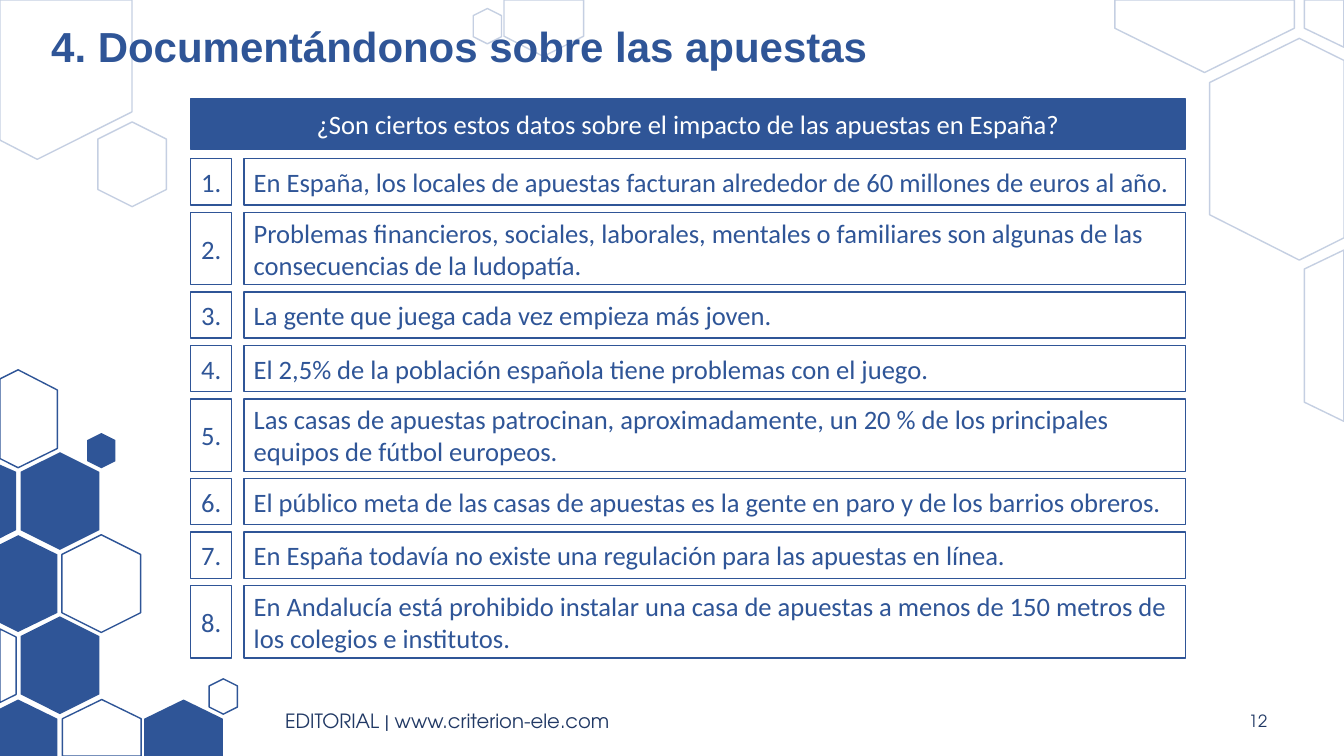
import pptx
import pptx.dml.color
import pptx.enum.shapes
import pptx.enum.text
import pptx.oxml
import pptx.oxml.ns
import pptx.util

Pt = pptx.util.Pt
RGBColor = pptx.dml.color.RGBColor
Align = pptx.enum.text.PP_ALIGN
Shape = pptx.enum.shapes.MSO_SHAPE

BLUE = RGBColor(0x2F, 0x55, 0x97)
NAVY = RGBColor(0x20, 0x38, 0x64)
WHITE = RGBColor(0xFF, 0xFF, 0xFF)

# Ornament styles: fill, line colour, line opacity in percent
PALE = (WHITE, BLUE, 28)
OUTLINE = (WHITE, BLUE, 100)
SOLID = (BLUE, None, 100)
BLANK = (WHITE, None, 100)

LARGE = (69.8, 56.2)
MEDIUM = (60.5, 49)
SMALL = (25.2, 20.2)


class SlideBuilder:
    """Holds the text style and the slide being built."""

    font = "Calibri"
    size = 19
    colour = BLUE

    def __init__(self, slide):
        self.slide = slide

    def paint(self, shape, fill, line, opacity=100):
        shape.shadow.inherit = False
        if fill is None:
            shape.fill.background()
        else:
            shape.fill.solid()
            shape.fill.fore_color.rgb = fill
        if line is None:
            shape.line.fill.background()
            return
        shape.line.color.rgb = line
        shape.line.width = Pt(1)
        if opacity < 100:
            colour = shape.element.xpath(".//a:ln//a:srgbClr")[0]
            namespace = pptx.oxml.ns.nsdecls("a")
            colour.append(pptx.oxml.parse_xml(f'<a:alpha {namespace} val="{opacity * 1000}"/>'))

    def hexagon(self, style, left, top, size):
        shape = self.slide.shapes.add_shape(Shape.HEXAGON, Pt(left), Pt(top), *map(Pt, size))
        shape.rotation = 90
        self.paint(shape, *style)

    def cut_hexagon(self, style, *corners):
        first, *others = [(Pt(x), Pt(y)) for x, y in corners]
        builder = self.slide.shapes.build_freeform(*first, scale=1.0)
        builder.add_line_segments(others, close=True)
        self.paint(builder.convert_to_shape(), *style)

    def set_text(self, shape, text, align=Align.LEFT, font=None, size=None, colour=None,
                 bold=False, spacing=None):
        frame = shape.text_frame
        frame.word_wrap = True
        frame.vertical_anchor = pptx.enum.text.MSO_ANCHOR.MIDDLE
        paragraph = frame.paragraphs[0]
        paragraph.alignment = align
        if spacing:
            paragraph.line_spacing = spacing
        run = paragraph.add_run()
        run.text = text
        run.font.name = font or self.font
        run.font.size = Pt(size or self.size)
        run.font.bold = bold
        run.font.color.rgb = colour or self.colour

    def label(self, box, text, **style):
        self.set_text(self.slide.shapes.add_textbox(*map(Pt, box)), text, **style)

    def panel(self, box, text, fill=None, **style):
        shape = self.slide.shapes.add_shape(Shape.RECTANGLE, *map(Pt, box))
        self.paint(shape, fill, BLUE)
        self.set_text(shape, text, **style)


def add_ornaments(page):
    whole, cut = page.hexagon, page.cut_hexagon

    # Pale hexagons along the top and right
    whole(PALE, 335.5, 8.6, SMALL)
    cut(PALE, (360, 0), (416.9, 0), (416.9, 25.9), (388.1, 40.3), (360, 25.9))
    cut(PALE, (796.3, 0), (924.5, 0), (924.5, 20.2), (860.4, 51.8), (796.3, 20.2))
    cut(PALE, (931.7, 0), (960, 0), (960, 33.8), (931.7, 20.2))
    cut(PALE, (928.1, 27.4), (960, 43.2), (960, 169.9), (928.1, 185.8), (864, 153.4), (864, 59))
    cut(PALE, (960, 178.6), (960, 301), (931.7, 287.3), (931.7, 192.2))
    cut(PALE, (0, 0), (94.3, 0), (94.3, 79.9), (26.6, 113.8), (0, 100.1))
    whole(PALE, 64.1, 92.9, MEDIUM)

    # Honeycomb in the lower left corner
    cut(OUTLINE, (13, 264.2), (41, 278.6), (41, 320.4), (13, 334.1), (0, 327.6), (0, 270.7))
    whole(BLANK, 37.4, 271.4, LARGE)
    cut(SOLID, (0, 331.9), (11.5, 337), (11.5, 378.7), (0, 384.5))
    whole(SOLID, 7.9, 329.8, LARGE)
    cut(SOLID, (13, 382.3), (41, 396), (41, 437.8), (13, 451.4), (0, 445), (0, 388.8))
    whole(OUTLINE, 37.4, 388.8, LARGE)
    cut(OUTLINE, (0, 449.3), (11.5, 455), (11.5, 496.1), (0, 501.8))
    whole(SOLID, 7.9, 447.1, LARGE)
    cut(SOLID, (13, 499.7), (41, 513.4), (41, 540), (0, 540), (0, 506.2))
    for style, left in ((OUTLINE, 44.6), (SOLID, 103)):
        right = left + 56.2
        cut(style, (left + 28.1, 499.7), (right, 513.4), (right, 540), (left, 540), (left, 513.4))
    whole(OUTLINE, 146.9, 487.4, SMALL)
    whole(SOLID, 59.8, 311.8, SMALL)


# Statements with the number of lines each one takes
STATEMENTS = [
    ("En España, los locales de apuestas facturan alrededor de 60 millones de euros al año.", 1),
    ("Problemas financieros, sociales, laborales, mentales o familiares son algunas de las "
     "consecuencias de la ludopatía.", 2),
    ("La gente que juega cada vez empieza más joven.", 1),
    ("El 2,5% de la población española tiene problemas con el juego.", 1),
    ("Las casas de apuestas patrocinan, aproximadamente, un 20 % de los principales "
     "equipos de fútbol europeos.", 2),
    ("El público meta de las casas de apuestas es la gente en paro y de los barrios obreros.", 1),
    ("En España todavía no existe una regulación para las apuestas en línea.", 1),
    ("En Andalucía está prohibido instalar una casa de apuestas a menos de 150 metros de "
     "los colegios e institutos.", 2),
]
ROW_HEIGHTS = {1: 33.1, 2: 51.8}
ROW_GAP = 5.1


def main():
    presentation = pptx.Presentation()
    presentation.slide_width = Pt(960)
    presentation.slide_height = Pt(540)
    page = SlideBuilder(presentation.slides.add_slide(presentation.slide_layouts[6]))
    add_ornaments(page)

    # Title and footer
    page.label((29.5, 13, 911.5, 43.2), "4. Documentándonos sobre las apuestas",
               font="Arial", size=30, bold=True, spacing=0.9)
    footer = {"font": "TeX Gyre Adventor", "colour": NAVY}
    page.label((196.6, 500.4, 470.2, 28.8), "EDITORIAL | www.criterion-ele.com",
               size=14, **footer)
    page.label((841, 500.4, 71.3, 28.8), "12", size=12, align=Align.RIGHT, **footer)

    # Question heading
    page.panel((136.1, 70.6, 710.6, 36),
               "¿Son ciertos estos datos sobre el impacto de las apuestas en España?",
               fill=BLUE, colour=WHITE, align=Align.CENTER)

    # Numbered statements
    top = 113.4
    for number, (statement, lines) in enumerate(STATEMENTS, start=1):
        height = ROW_HEIGHTS[lines]
        page.panel((136.1, top, 29.5, height), f"{number}.", align=Align.CENTER)
        page.panel((174.2, top, 672.5, height), statement)
        top += height + ROW_GAP

    presentation.save("out.pptx")


if __name__ == "__main__":
    main()
